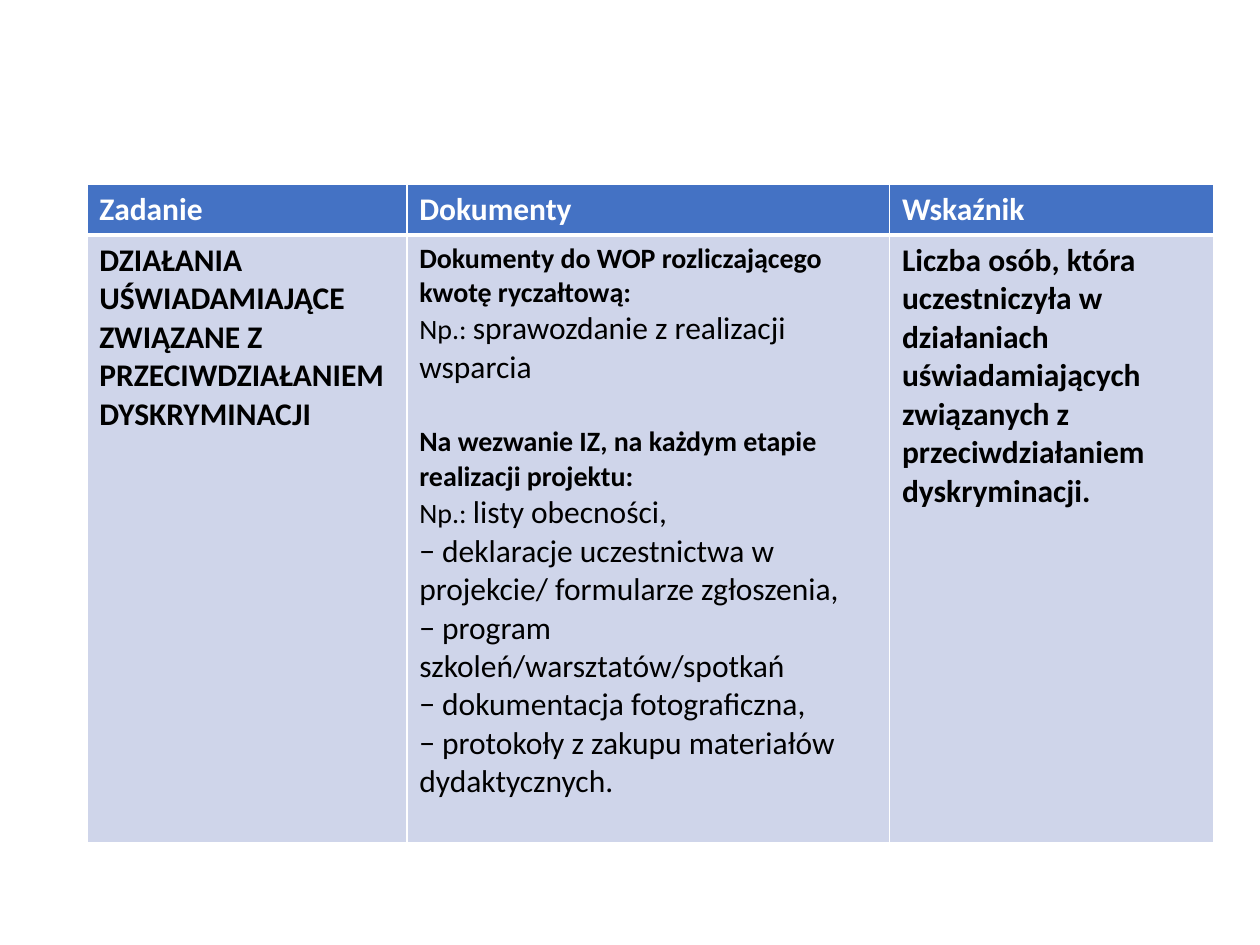
import pptx
import pptx.dml.color
import pptx.oxml
import pptx.oxml.ns
import pptx.util

FONT = "Calibri"
WHITE, BLACK, HEADER_BLUE, BODY_BLUE = "FFFFFF", "000000", "4472C4", "CFD5EA"
COLUMN_WIDTHS = (6.45, 9.73, 6.53)
ROW_HEIGHTS = (1.02, 12.25)
SECTION_GAP = 22

HEADINGS = ("Zadanie", "Dokumenty", "Wskaźnik")
TASK = "DZIAŁANIA UŚWIADAMIAJĄCE ZWIĄZANE Z PRZECIWDZIAŁANIEM DYSKRYMINACJI"
INDICATOR = (
    "Liczba osób, która uczestniczyła w działaniach uświadamiających "
    "związanych z przeciwdziałaniem dyskryminacji."
)
DOCUMENTS = (
    (
        "Dokumenty do WOP rozliczającego kwotę ryczałtową:",
        ("sprawozdanie z realizacji wsparcia",),
    ),
    (
        "Na wezwanie IZ, na każdym etapie realizacji projektu:",
        (
            "listy obecności,",
            "− deklaracje uczestnictwa w projekcie/ formularze zgłoszenia,",
            "− program szkoleń/warsztatów/spotkań",
            "− dokumentacja fotograficzna,",
            "− protokoły z zakupu materiałów dydaktycznych.",
        ),
    ),
)


def color(value):
    """Return the colour for a hex string."""
    return pptx.dml.color.RGBColor.from_string(value)


def add_span(para, text, size=18, bold=True, ink=BLACK):
    """Append a formatted run to a paragraph."""
    span = para.add_run()
    span.text = text
    span.font.name = FONT
    span.font.size = pptx.util.Pt(size)
    span.font.bold = bold
    span.font.color.rgb = color(ink)


def style_cell(cell, fill, bottom_width):
    """Give a cell its white borders and its fill."""
    properties = cell._tc.get_or_add_tcPr()
    for side, width in (("L", 1), ("R", 1), ("T", 1), ("B", bottom_width)):
        properties.append(pptx.oxml.parse_xml(
            f'<a:ln{side} {pptx.oxml.ns.nsdecls("a")} w="{pptx.util.Pt(width)}">'
            f'<a:solidFill><a:srgbClr val="{WHITE}"/></a:solidFill></a:ln{side}>'
        ))
    cell.fill.solid()
    cell.fill.fore_color.rgb = color(fill)


def fill_documents(cell):
    """Write each group of documents under its bold heading."""
    frame = cell.text_frame
    for group, (heading, documents) in enumerate(DOCUMENTS):
        para = frame.add_paragraph() if group else frame.paragraphs[0]
        if group:
            para.space_before = pptx.util.Pt(SECTION_GAP)
        add_span(para, heading, size=16)
        for index, document in enumerate(documents):
            para = frame.add_paragraph()
            if index == 0:
                add_span(para, "Np.: ", size=16, bold=False)
            add_span(para, document, bold=False)


def add_task_table(page, left, top):
    """Place the table of task, documents and indicator."""
    table = page.shapes.add_table(
        len(ROW_HEIGHTS), len(COLUMN_WIDTHS),
        pptx.util.Cm(left), pptx.util.Cm(top),
        pptx.util.Cm(sum(COLUMN_WIDTHS)), pptx.util.Cm(sum(ROW_HEIGHTS)),
    ).table
    for column, width in zip(table.columns, COLUMN_WIDTHS):
        column.width = pptx.util.Cm(width)
    for row, height in zip(table.rows, ROW_HEIGHTS):
        row.height = pptx.util.Cm(height)
    for index, heading in enumerate(HEADINGS):
        header, body = table.cell(0, index), table.cell(1, index)
        style_cell(header, HEADER_BLUE, 3)
        style_cell(body, BODY_BLUE, 1)
        add_span(header.text_frame.paragraphs[0], heading, ink=WHITE)
    for index, text in ((0, TASK), (2, INDICATOR)):
        add_span(table.cell(1, index).text_frame.paragraphs[0], text)
    fill_documents(table.cell(1, 1))


def main():
    """Build the deck and save it."""
    deck = pptx.Presentation()
    deck.slide_width = pptx.util.Cm(25.4)
    deck.slide_height = pptx.util.Cm(19.05)
    page = deck.slides.add_slide(deck.slide_layouts.get_by_name("Blank"))
    add_task_table(page, left=1.75, top=3.71)
    deck.save("out.pptx")


if __name__ == "__main__":
    main()
